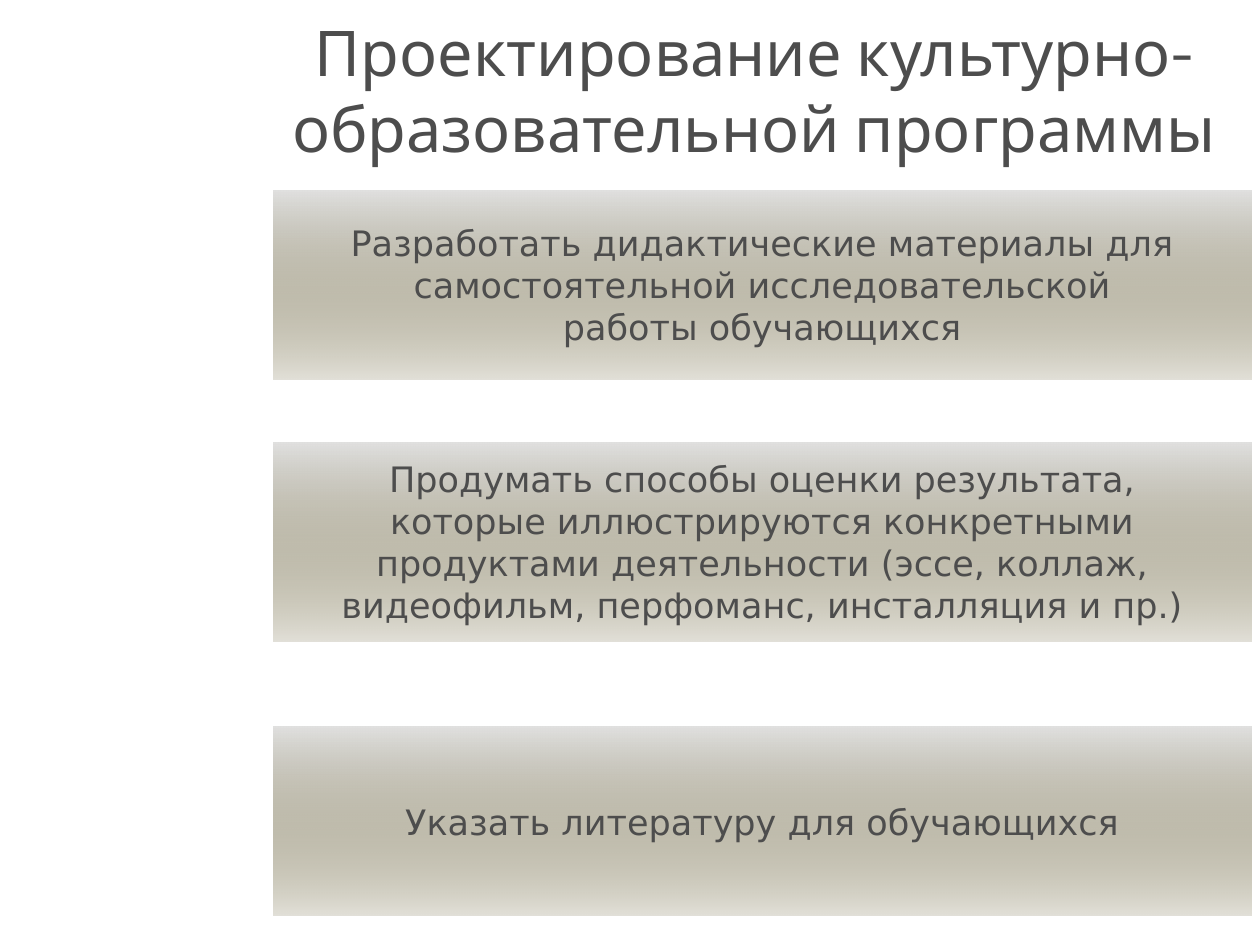
from lxml import etree
from pptx import Presentation, util as u
from pptx.dml.color import RGBColor
from pptx.enum import shapes, text
from pptx.oxml.ns import qn

HUES = {"text": "4D4D4D", "light": "E0E0DF", "dark": "413501"}
LEFT, WIDTH = 2.17, 7.76
CARDS = [
    (1.51, 1.5, ["Разработать дидактические материалы для",
                 "самостоятельной исследовательской",
                 "работы обучающихся"]),
    (3.51, 1.58, ["Продумать способы оценки результата,",
                  "которые иллюстрируются конкретными",
                  "продуктами деятельности (эссе, коллаж,",
                  "видеофильм, перфоманс, инсталляция и пр.)"]),
    (5.77, 1.5, ["Указать литературу для обучающихся"]),
]


class Deck:
    def __init__(self):
        self.prs = Presentation()
        self.prs.slide_width, self.prs.slide_height = u.Inches(10), u.Inches(7.5)
        self.slide = self.prs.slides.add_slide(self.prs.slide_layouts[6])

    def hue(self, name):
        return RGBColor.from_string(HUES[name])

    def label(self, shape, lines, size, face, wrap):
        frame = shape.text_frame
        frame.word_wrap = wrap
        frame.vertical_anchor = text.MSO_ANCHOR.MIDDLE
        frame.text = "\n".join(lines)
        for para in frame.paragraphs:
            para.alignment = text.PP_ALIGN.CENTER
            para.font.size = u.Pt(size)
            para.font.name = face
            para.font.color.rgb = self.hue("text")

    def title(self, line, *box):
        shape = self.slide.shapes.add_textbox(*map(u.Inches, box))
        self.label(shape, [line], 36, "Karla", True)

    def shade(self, shape):
        """Fade from solid light at the top to faint dark at the bottom."""
        fill = shape.fill
        fill.gradient()
        fill.gradient_angle = 270
        for stop, name in zip(fill.gradient_stops, ("light", "dark")):
            stop.color.rgb = self.hue(name)
        last = list(shape.element.spPr.iter(qn("a:srgbClr")))[-1]
        etree.SubElement(last, qn("a:alpha"), val="15000")

    def card(self, top, height, lines):
        box = map(u.Inches, (LEFT, top, WIDTH, height))
        shape = self.slide.shapes.add_shape(shapes.MSO_SHAPE.RECTANGLE, *box)
        shape.shadow.inherit = False
        shape.line.fill.background()
        self.shade(shape)
        self.label(shape, lines, 20, "DejaVu Sans", False)


def main():
    deck = Deck()
    deck.title("Проектирование культурно-образовательной программы",
               2.05, 0.08, 7.87, 1.26)
    for card in CARDS:
        deck.card(*card)
    deck.prs.save("out.pptx")


if __name__ == "__main__":
    main()
